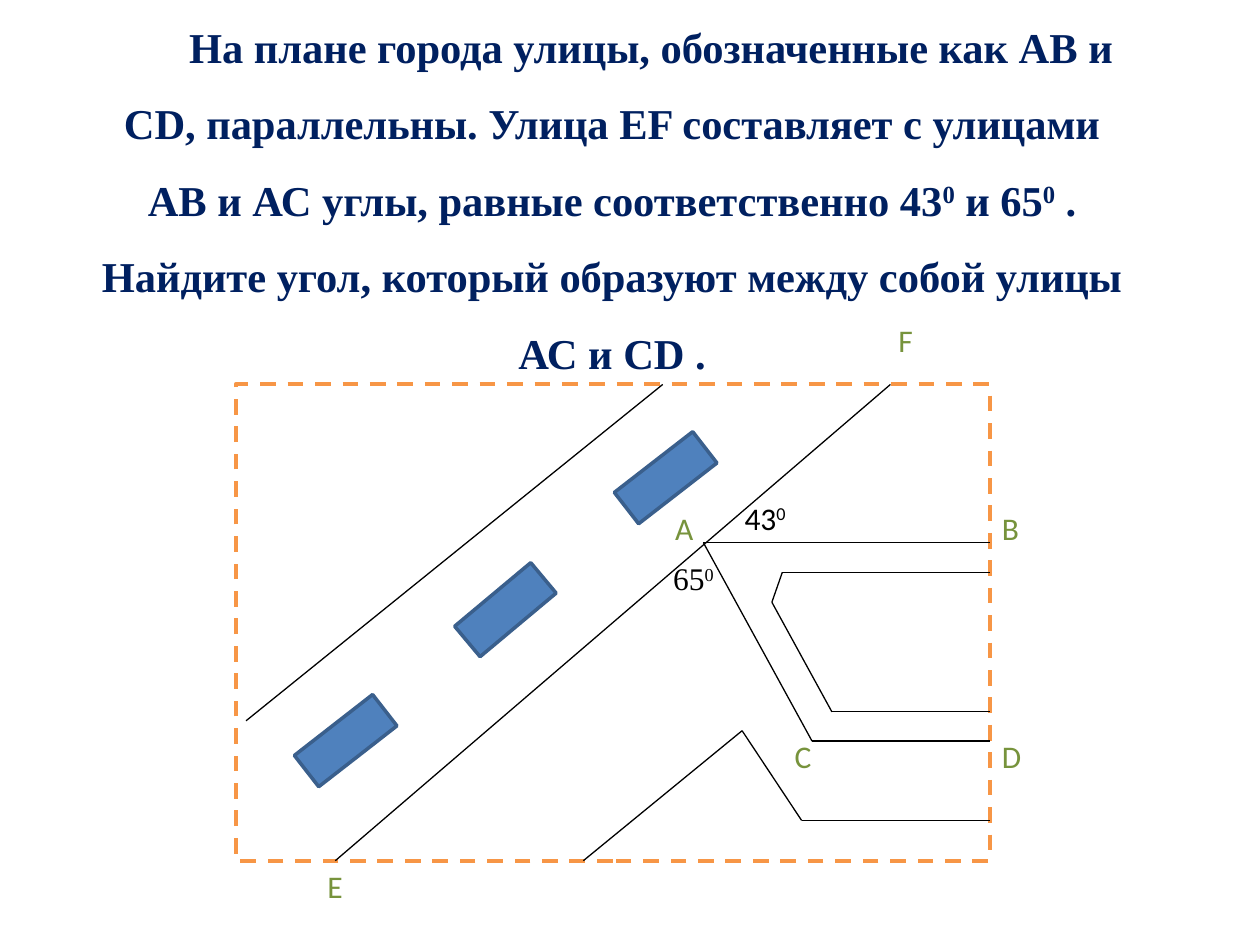
import itertools
import pptx
import pptx.dml.color
import pptx.enum.dml
import pptx.enum.shapes
import pptx.enum.text
import pptx.util
import lxml.etree

Cm = pptx.util.Cm
Pt = pptx.util.Pt


def color(value):
    return pptx.dml.color.RGBColor.from_string(value)


def add_text(page, place, pieces, font, size, fill, bold=False, indent=0):
    box = page.shapes.add_textbox(*[Cm(length) for length in place])
    box.text_frame.word_wrap = True
    para = box.text_frame.paragraphs[0]
    para._p.get_or_add_pPr().set("indent", str(Cm(indent)))
    for position, piece in enumerate(pieces):
        span = para.add_run()
        span.text = piece
        span.font.name = font
        span.font.size = Pt(size)
        span.font.bold = bold
        span.font.color.rgb = color(fill)
        if position % 2:
            span._r.get_or_add_rPr().set("baseline", "30000")
    return box


deck = pptx.Presentation()
deck.slide_width = Cm(25.4)
deck.slide_height = Cm(19.05)
page = deck.slides.add_slide(deck.slide_layouts[6])

problem = [
    "На плане города улицы, обозначенные как АВ и СD, параллельны. "
    "Улица ЕF составляет с улицами АВ и АС углы, равные соответственно 43",
    "0",
    " и 65",
    "0",
    " . Найдите угол, который образуют между собой улицы АС и СD .",
]
title = add_text(page, (1.57, 1.78, 21.54, 5), problem,
                 "Times New Roman", 24.3, "002060", True, 1.57)
title.text_frame.vertical_anchor = pptx.enum.text.MSO_ANCHOR.MIDDLE
title.text_frame.margin_left = title.text_frame.margin_right = Cm(0.28)
title.text_frame.margin_bottom = Cm(1.16)
title.text_frame.paragraphs[0].alignment = pptx.enum.text.PP_ALIGN.CENTER
title.text_frame.paragraphs[0].line_spacing = 1.5

left, top, right, bottom = 4.75, 7.75, 19.95, 17.35
rectangle = pptx.enum.shapes.MSO_SHAPE.RECTANGLE
plan = page.shapes.add_shape(rectangle, Cm(left), Cm(top), Cm(right - left), Cm(bottom - top))
plan.shadow.inherit = False
plan.fill.solid()
plan.fill.fore_color.rgb = color("FFFFFF")
plan.line.color.rgb = color("F79646")
plan.line.width = Pt(2.25)
plan.line.dash_style = pptx.enum.dml.MSO_LINE.DASH

streets = [
    [(6.76, bottom), (17.95, top)],
    [(right, 10.94), (14.18, 10.94), (16.37, 14.94), (right, 14.94)],
    [(right, 11.54), (15.77, 11.54), (15.56, 12.14), (16.77, 14.35), (right, 14.35)],
    [(13.36, top), (4.96, 14.53)],
    [(right, 16.54), (16.16, 16.54), (14.96, 14.73), (11.76, bottom)],
]
for street in streets:
    for start, end in itertools.pairwise(street):
        edge = page.shapes.add_connector(
            pptx.enum.shapes.MSO_CONNECTOR.STRAIGHT,
            Cm(start[0]), Cm(start[1]), Cm(end[0]), Cm(end[1]))
        edge.line.color.rgb = color("000000")
        edge.line.width = Pt(0.75)
        lxml.etree.SubElement(edge._element.spPr, pptx.oxml.ns.qn("a:effectLst"))

for x, y, angle in [(5.97, 14.53, 322.1), (9.19, 11.89, 320.1), (12.42, 9.23, 322.2)]:
    marking = page.shapes.add_shape(rectangle, Cm(x), Cm(y), Cm(2), Cm(0.8))
    marking.rotation = angle
    marking.shadow.inherit = False
    marking.fill.solid()
    marking.fill.fore_color.rgb = color("4F81BD")
    marking.line.color.rgb = color("3A5F8C")
    marking.line.width = Pt(2)

points = [
    ("А", 13.36, 10.13), ("В", right, 10.13), ("D", right, 14.73),
    ("C", 15.77, 14.73), ("F", 17.86, 6.35), ("E", 6.35, 17.35),
]
for name, x, y in points:
    add_text(page, (x, y, 1, 1.02), [name], "Calibri", 18, "77933C")

add_text(page, (14.76, 9.93, 1.6, 1.02), ["43", "0"], "Calibri", 18, "000000")
angle_label = add_text(page, (12.57, 11.15, 2.2, 1.02), ["65", "0"],
                       "Times New Roman", 18, "000000", indent=0.75)
angle_label.text_frame.vertical_anchor = pptx.enum.text.MSO_ANCHOR.MIDDLE

deck.save("out.pptx")
